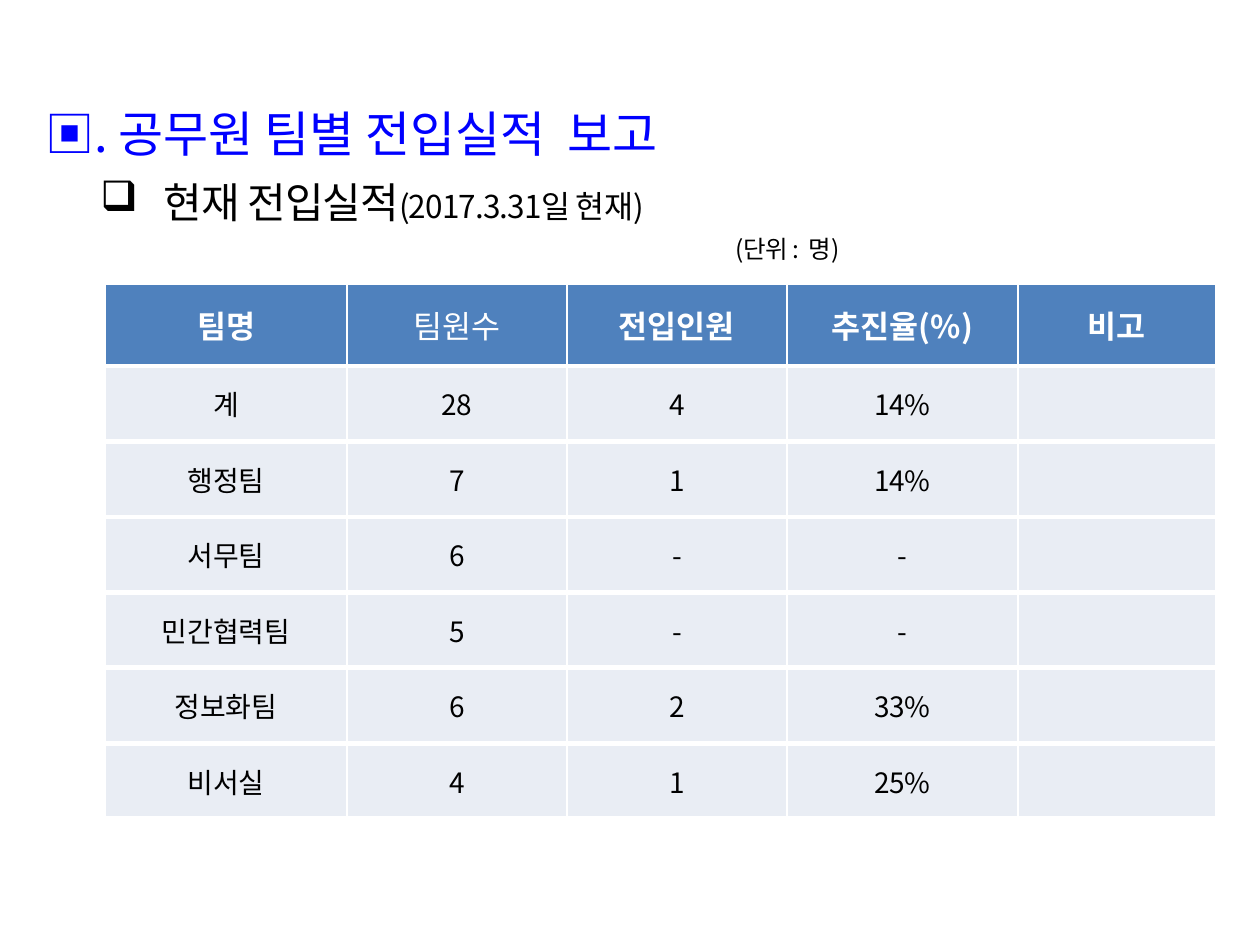
from lxml.etree import SubElement
from pptx import Presentation
from pptx.dml.color import RGBColor
from pptx.enum.text import MSO_ANCHOR, PP_ALIGN
from pptx.oxml.ns import qn
from pptx.util import Pt

FONT = "Noto Sans CJK KR"
BLUE = RGBColor(0x00, 0x00, 0xFF)
BLACK = RGBColor(0x00, 0x00, 0x00)
WHITE = RGBColor(0xFF, 0xFF, 0xFF)
HEADER_FILL = RGBColor(0x4F, 0x81, 0xBD)
BODY_FILL = RGBColor(0xE9, 0xED, 0xF4)

# Content: runs (text, size, letter spacing), colour, margin and indent in px,
# line height in points, bullet
HEADINGS = [
    ([("▣. 공무원 팀별 전입실적  보고", 28, 0)], BLUE, 71, -63, 45.7, None),
    ([("현재 전입실적", 24, -0.5), ("(2017.3.31일 현재)", 18, -0.5)],
     BLACK, 126, -63, 37, "❑"),
    ([("(단위 :  명)", 14, -0.5)], BLACK, 698, 0, 21, None),
]
COLUMNS = [("팀명", 242, True), ("팀원수", 220, False), ("전입인원", 220, True),
           ("추진율(%)", 231, True), ("비고", 198, True)]
TEAMS = [
    ("계", "28", "4", "14%", ""),
    ("행정팀", "7", "1", "14%", ""),
    ("서무팀", "6", "-", "-", ""),
    ("민간협력팀", "5", "-", "-", ""),
    ("정보화팀", "6", "2", "33%", ""),
    ("비서실", "4", "1", "25%", ""),
]
HEADER_HEIGHT, BODY_HEIGHT = 82, 453


def px(length):
    return round(length * 914400 / 126)


def style_run(run, size, color, bold=False):
    run.font.name = FONT
    run.font.size = Pt(size)
    run.font.bold = bold
    run.font.color.rgb = color
    SubElement(run._r.get_or_add_rPr(), qn("a:ea"), typeface=FONT)


def set_borders(cell, top_width):
    props = cell._tc.get_or_add_tcPr()
    for position, (side, width) in enumerate(
            [("lnL", 1), ("lnR", 1), ("lnT", top_width), ("lnB", 3)]):
        line = SubElement(props, qn(f"a:{side}"), w=str(Pt(width)))
        fill = SubElement(line, qn("a:solidFill"))
        SubElement(fill, qn("a:srgbClr"), val=str(WHITE))
        props.insert(position, line)


prs = Presentation()
prs.slide_width, prs.slide_height = px(1260), px(945)
slide = prs.slides.add_slide(prs.slide_layouts[6])

# Headings
headings = slide.shapes.add_textbox(px(25), px(76), px(1235), px(804)).text_frame
headings.word_wrap = True
for index, (runs, color, margin, indent, height, bullet) in enumerate(HEADINGS):
    paragraph = headings.add_paragraph() if index else headings.paragraphs[0]
    paragraph.line_spacing = Pt(height)
    props = paragraph._p.get_or_add_pPr()
    props.set("marL", str(px(margin)))
    props.set("indent", str(px(indent)))
    if bullet:
        SubElement(props, qn("a:buChar"), char=bullet)
    for text, size, spacing in runs:
        run = paragraph.add_run()
        run.text = text
        style_run(run, size, color)
        run._r.get_or_add_rPr().set("spc", str(int(spacing * 100)))

# Team table
total_width = sum(width for _, width, _ in COLUMNS)
table = slide.shapes.add_table(
    len(TEAMS) + 1, len(COLUMNS), px(105), px(284),
    px(total_width), px(HEADER_HEIGHT + BODY_HEIGHT)).table
for column, (_, width, _) in zip(table.columns, COLUMNS):
    column.width = px(width)
for index, row in enumerate(table.rows):
    row.height = px(BODY_HEIGHT / len(TEAMS) if index else HEADER_HEIGHT)

rows = [[title for title, _, _ in COLUMNS], *TEAMS]
for r, values in enumerate(rows):
    for c, value in enumerate(values):
        cell = table.cell(r, c)
        cell.vertical_anchor = MSO_ANCHOR.MIDDLE
        cell.fill.solid()
        cell.fill.fore_color.rgb = BODY_FILL if r else HEADER_FILL
        set_borders(cell, 3 if r else 1)
        cell.text_frame.text = value
        paragraph = cell.text_frame.paragraphs[0]
        paragraph.alignment = PP_ALIGN.CENTER
        for run in paragraph.runs:
            if r:
                style_run(run, 16, BLACK)
            else:
                style_run(run, 18, WHITE, COLUMNS[c][2])

prs.save("out.pptx")
